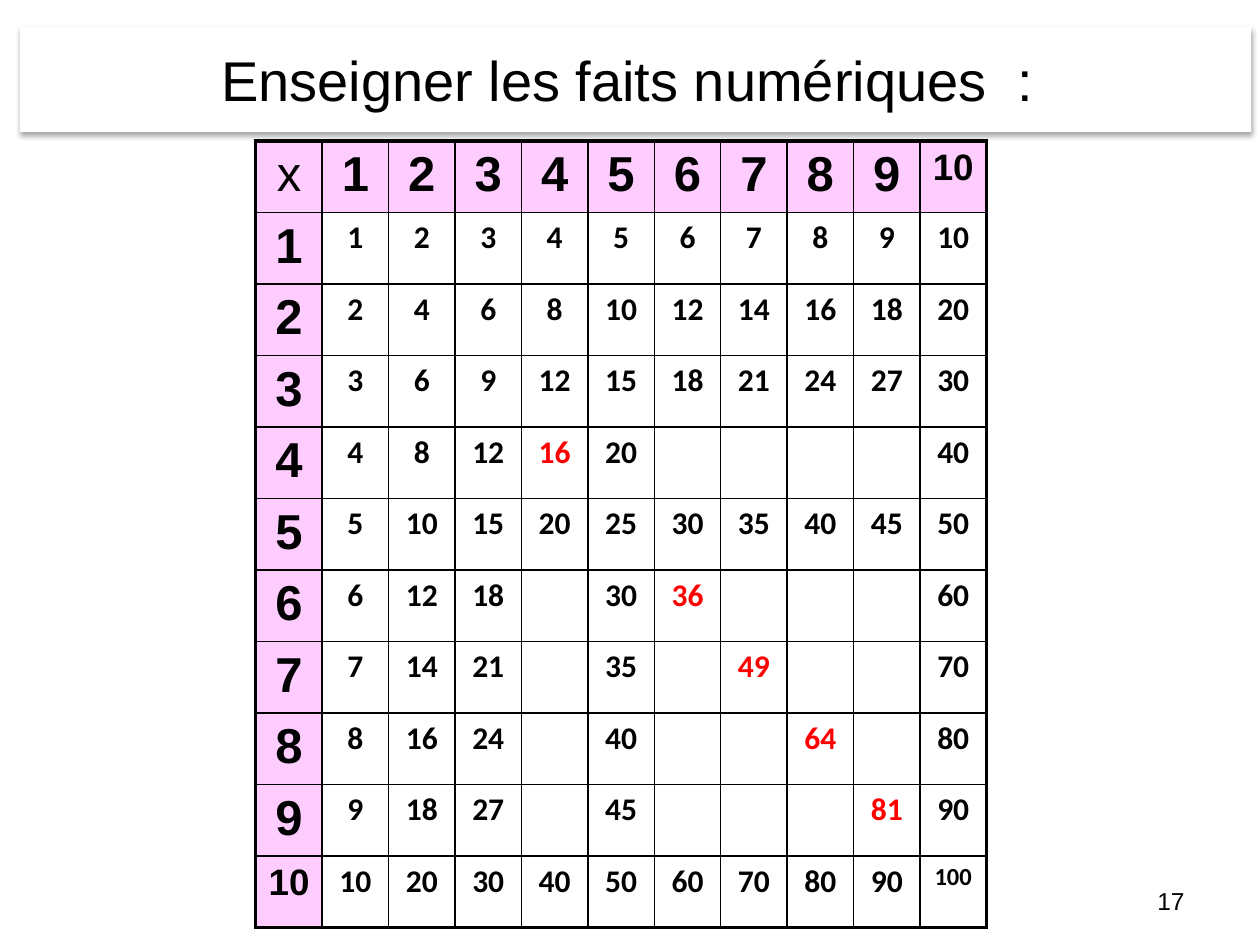
from dataclasses import dataclass
from lxml import etree
from pptx import Presentation
from pptx.dml.color import RGBColor
from pptx.enum.text import MSO_ANCHOR, MSO_AUTO_SIZE, PP_ALIGN
from pptx.oxml.ns import qn
from pptx.util import Inches, Pt

MIDDLE = MSO_ANCHOR.MIDDLE
FIT = MSO_AUTO_SIZE.SHAPE_TO_FIT_TEXT
CENTER, RIGHT = PP_ALIGN.CENTER, PP_ALIGN.RIGHT

WIDE, HIGH = Inches(10), Inches(7.5)
COLS, ROWS = 100, 75
COUNT = 10
EASY = {1, 2, 3, 5, 10}


@dataclass(frozen=True)
class Theme:
    ink: str = "000000"
    paper: str = "FFFFFF"
    head: str = "FFCCFF"
    square: str = "FF0000"
    sans: str = "Arial"
    body: str = "Calibri"
    title: int = 32
    label: int = 28
    small: int = 21
    fact: int = 18
    note: int = 14
    thick: float = 2.25
    thin: float = 1


THEME = Theme()


def place(col, row, wide, high):
    return (int(WIDE * col / COLS), int(HIGH * row / ROWS),
            int(WIDE * wide / COLS), int(HIGH * high / ROWS))


def node(base, tag, **values):
    item = etree.SubElement(base, qn(tag))
    for key, value in values.items():
        item.set(key, str(value))
    return item


def style(target, values):
    for key, value in values.items():
        setattr(target, key, value)


def write(frame, text, align, size, font=THEME.sans, color=THEME.ink, bold=False):
    para = frame.paragraphs[0]
    para.alignment = align
    run = para.add_run()
    run.text = text
    style(run.font, {"name": font, "size": Pt(size), "bold": bold})
    run.font.color.rgb = RGBColor.from_string(color)
    return para


def paint(fill, color):
    fill.solid()
    fill.fore_color.rgb = RGBColor.from_string(color)


def add_title(slide, box):
    shape = slide.shapes.title
    style(shape, dict(zip(("left", "top", "width", "height"), box)))
    paint(shape.fill, THEME.paper)
    effects = node(shape._element.spPr, "a:effectLst")
    shade = node(effects, "a:outerShdw", blurRad=Pt(3.1), dist=Pt(1.8),
                 dir=90 * 60000, rotWithShape=0)
    tint = node(shade, "a:srgbClr", val=THEME.ink)
    node(tint, "a:alpha", val=35000)
    frame = shape.text_frame
    style(frame, {"word_wrap": True, "auto_size": FIT, "vertical_anchor": MIDDLE})
    write(frame, "Enseigner les faits numériques  : ", CENTER, THEME.title)


def add_edges(cell, row, col):
    outer = {"a:lnL": col == 0, "a:lnR": col == COUNT,
             "a:lnT": row == 0, "a:lnB": row == COUNT}
    props = cell._tc.get_or_add_tcPr()
    for tag, edge in outer.items():
        line = node(props, tag, w=Pt(THEME.thick if edge else THEME.thin))
        node(node(line, "a:solidFill"), "a:srgbClr", val=THEME.ink)


def get_fact(row, col):
    if row == 0 or col == 0:
        text = str(row + col) if row + col else "x"
        size = THEME.small if row + col == COUNT else THEME.label
        return text, {"size": size, "bold": text != "x"}
    if row != col and not EASY & {row, col}:
        return "", {}
    value = row * col
    hard = row == col and row not in EASY
    return str(value), {"size": THEME.note if value == 100 else THEME.fact,
                        "font": THEME.body, "bold": True,
                        "color": THEME.square if hard else THEME.ink}


def fill_cell(cell, row, col):
    add_edges(cell, row, col)
    if row == 0 or col == 0:
        paint(cell.fill, THEME.head)
    else:
        cell.fill.background()
    text, look = get_fact(row, col)
    if text:
        para = write(cell.text_frame, text, CENTER, **look)
        space = node(para._p.get_or_add_pPr(), "a:spcBef")
        node(space, "a:spcPct", val=20000)


def add_grid(slide, box):
    size = COUNT + 1
    table = slide.shapes.add_table(size, size, *box).table
    style(table, {"first_row": False, "horz_banding": False})
    for part in table.columns:
        part.width = box[2] // size
    for part in table.rows:
        part.height = box[3] // size
    for row in range(size):
        for col in range(size):
            fill_cell(table.cell(row, col), row, col)


def add_page(slide, box):
    frame = slide.shapes.add_textbox(*box).text_frame
    style(frame, {"word_wrap": True, "vertical_anchor": MIDDLE})
    write(frame, "17", RIGHT, THEME.note)


def main():
    deck = Presentation()
    style(deck, {"slide_width": WIDE, "slide_height": HIGH})
    slide = deck.slides.add_slide(deck.slide_layouts[5])
    add_title(slide, place(1.6, 3.1, 97.7, 6.4))
    add_grid(slide, place(20.3, 11.2, 58, 62.3))
    add_page(slide, place(71.7, 69.5, 23.3, 4))
    deck.save("out.pptx")


if __name__ == "__main__":
    main()
